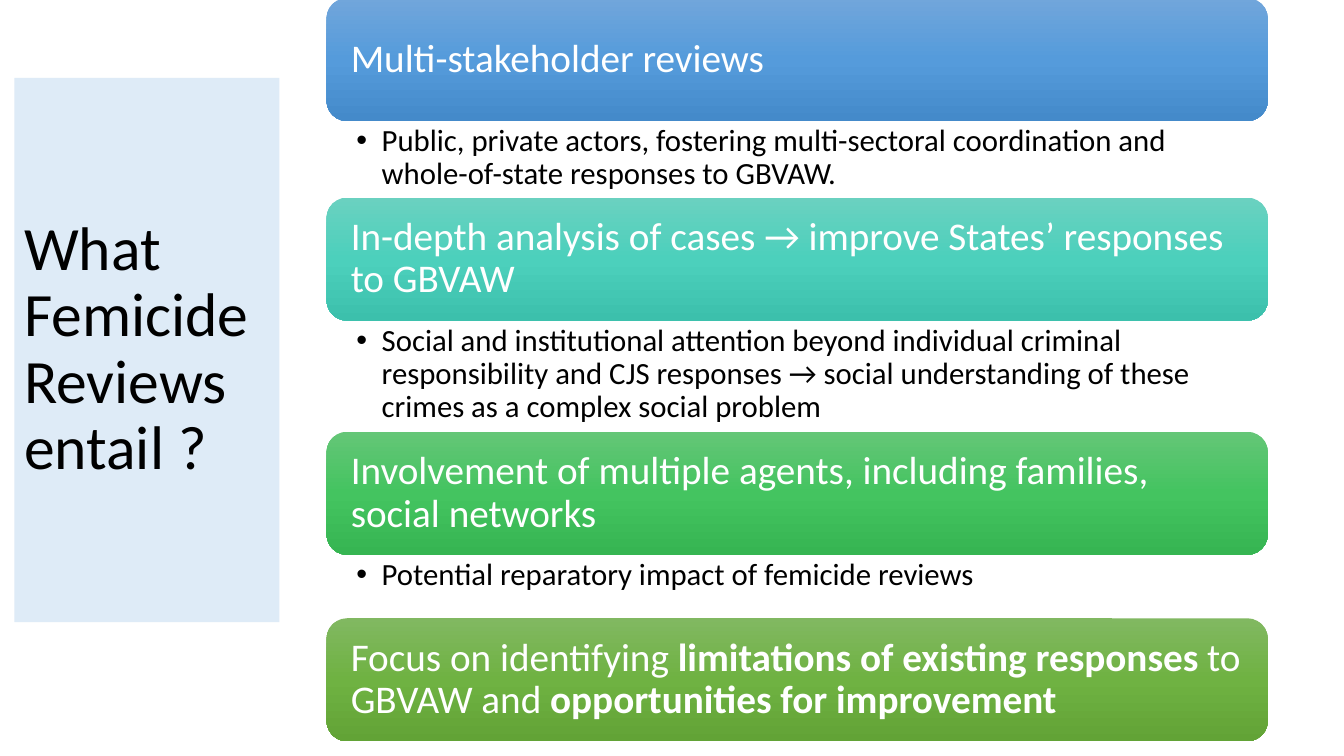
from copy import deepcopy
from dataclasses import dataclass

from lxml.etree import SubElement
from pptx import Presentation
from pptx.dml.color import RGBColor
from pptx.enum.shapes import MSO_SHAPE
from pptx.enum.text import MSO_ANCHOR, MSO_AUTO_SIZE, PP_ALIGN
from pptx.oxml.ns import qn
from pptx.util import Cm, Pt


@dataclass(frozen=True)
class Theme:
    """Colours, font and type sizes of the slide."""
    font: str = "Calibri"
    dark: str = "000000"
    light: str = "FFFFFF"
    title_fill: str = "DEEBF7"
    title_size: int = 44
    band_size: int = 28
    list_size: int = 22
    bands: tuple = (
        ("71A6DB", "559BDB", "448ACA"),
        ("6AD1C0", "4CD0BC", "3CC0AC"),
        ("64C677", "44C460", "36B552"),
        ("81B861", "6FB242", "62A336"),
    )


THEME = Theme()
TITLE = "What Femicide Reviews entail ?"
BAND_LEFT, BAND_WIDTH, BAND_HEIGHT, FIRST_TOP = 8.23, 23.72, 3.1, -0.05
SECTIONS = (
    (
        [("Multi-stakeholder reviews", False)],
        "Public, private actors, fostering multi-sectoral coordination and "
        "whole-of-state responses to GBVAW.",
        1.93,
    ),
    (
        [("In-depth analysis of cases → improve States’ responses to GBVAW", False)],
        "Social and institutional attention beyond individual criminal "
        "responsibility and CJS responses → social understanding of these "
        "crimes as a complex social problem",
        2.8,
    ),
    (
        [("Involvement of multiple agents, including families, social networks", False)],
        "Potential reparatory impact of femicide reviews",
        1.6,
    ),
    (
        [
            ("Focus on identifying ", False),
            ("limitations of existing responses ", True),
            ("to GBVAW and ", False),
            ("opportunities for improvement", True),
        ],
        None,
        0,
    ),
)


def apply_format(target, values):
    """Set each attribute named in values on the target."""
    for name, value in values.items():
        setattr(target, name, value)


def place(shape, left, top, width, height):
    """Move and size a shape, in centimetres."""
    apply_format(shape, {
        "left": Cm(left), "top": Cm(top), "width": Cm(width), "height": Cm(height),
    })


def write_text(shape, runs, size, color, anchor, margins):
    """Write one left-aligned paragraph of (text, bold) runs and return it."""
    left, top, right, bottom = margins
    apply_format(shape.text_frame, {
        "word_wrap": True, "auto_size": MSO_AUTO_SIZE.NONE, "vertical_anchor": anchor,
        "margin_left": Cm(left), "margin_top": Cm(top),
        "margin_right": Cm(right), "margin_bottom": Cm(bottom),
    })
    paragraph = shape.text_frame.paragraphs[0]
    apply_format(paragraph, {
        "alignment": PP_ALIGN.LEFT, "line_spacing": 0.9,
        "space_before": Pt(0), "space_after": Pt(0),
    })
    for text, bold in runs:
        run = paragraph.add_run()
        run.text = text
        apply_format(run.font, {"name": THEME.font, "size": Pt(size), "bold": bold})
        run.font.color.rgb = RGBColor.from_string(color)
    return paragraph


def fill_gradient(shape, colors):
    """Fill a shape with a three-stop gradient running downwards."""
    shape.fill.gradient()
    shape.fill.gradient_angle = 270
    stop_list = shape.element.spPr.find(".//" + qn("a:gsLst"))
    stop_list.insert(1, deepcopy(stop_list[0]))
    for stop, position, color in zip(shape.fill.gradient_stops, (0, 0.5, 1), colors):
        stop.position = position
        stop.color.rgb = RGBColor.from_string(color)


def format_title(title):
    """Place the title panel at the left and write its text."""
    place(title, 0.36, 1.96, 6.68, 13.72)
    title.fill.solid()
    title.fill.fore_color.rgb = RGBColor.from_string(THEME.title_fill)
    write_text(title, [(TITLE, False)], THEME.title_size, THEME.dark,
               MSO_ANCHOR.MIDDLE, (0.25, 0.13, 0.25, 0.13))


def add_band(slide, top, runs, colors):
    """Add a rounded gradient band with its heading."""
    band = slide.shapes.add_shape(MSO_SHAPE.ROUNDED_RECTANGLE, 0, 0, 0, 0)
    place(band, BAND_LEFT, top, BAND_WIDTH, BAND_HEIGHT)
    band.shadow.inherit = False
    band.line.fill.background()
    fill_gradient(band, colors)
    write_text(band, runs, THEME.band_size, THEME.light,
               MSO_ANCHOR.MIDDLE, (0.46, 0.46, 0.46, 0.46))


def format_list(body, top, height, text):
    """Place a body placeholder under its band as a bulleted list."""
    place(body, BAND_LEFT, top, BAND_WIDTH, height)
    paragraph = write_text(body, [(text, False)], THEME.list_size, THEME.dark,
                           MSO_ANCHOR.TOP, (0.75, 0.1, 0.57, 0.1))
    properties = paragraph._p.get_or_add_pPr()
    properties.set("marL", str(Cm(0.64)))
    properties.set("indent", str(-Cm(0.64)))
    SubElement(properties, qn("a:buFont"), typeface="Arial")
    SubElement(properties, qn("a:buChar"), char="•")


def main():
    """Build the slide and save it."""
    presentation = Presentation()
    apply_format(presentation, {"slide_width": Cm(33.87), "slide_height": Cm(19.05)})
    comparison_layout = presentation.slide_layouts[4]
    slide = presentation.slides.add_slide(comparison_layout)
    format_title(slide.shapes.title)
    bodies = [shape for shape in slide.placeholders if shape.placeholder_format.idx > 0]
    top = FIRST_TOP
    for (runs, text, height), colors, body in zip(SECTIONS, THEME.bands, bodies):
        add_band(slide, top, runs, colors)
        top += BAND_HEIGHT
        if text:
            format_list(body, top, height, text)
        else:
            body.element.getparent().remove(body.element)
        top += height
    presentation.save("out.pptx")


if __name__ == "__main__":
    main()
